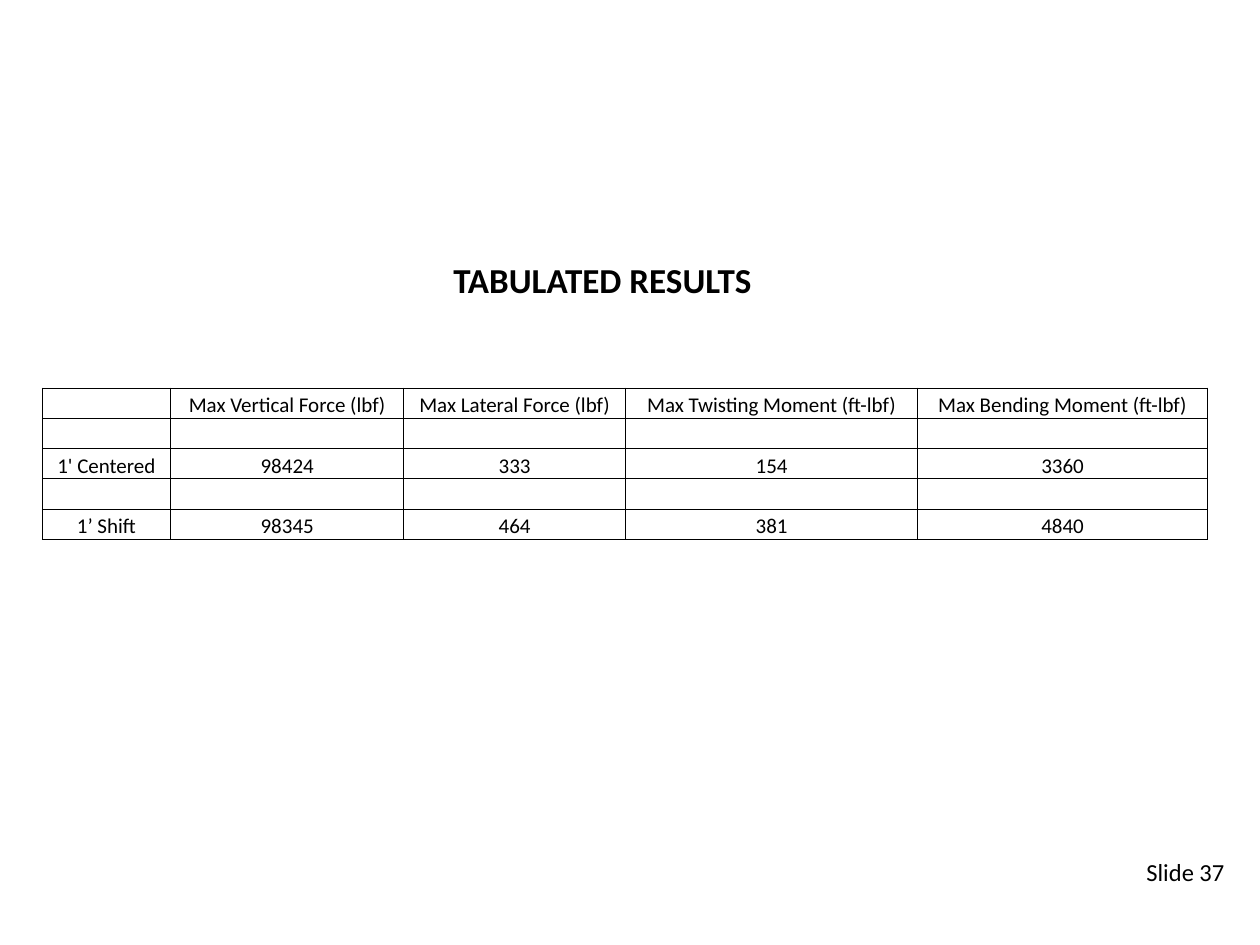
from lxml.etree import SubElement
from pptx import Presentation
from pptx.dml.color import RGBColor
from pptx.enum.text import MSO_ANCHOR, PP_ALIGN
from pptx.oxml.ns import qn
from pptx.util import Cm, Pt

BLACK = RGBColor(0x00, 0x00, 0x00)
FONT = "Calibri"
SIZE = 12

COLS = [2.59, 4.7, 4.47, 5.89, 5.84]
ROW = 0.61
DATA = [
    ["", "Max Vertical Force (lbf)", "Max Lateral Force (lbf)",
     "Max Twisting Moment (ft-lbf)", "Max Bending Moment (ft-lbf)"],
    [""] * 5,
    ["1' Centered", "98424", "333", "154", "3360"],
    [""] * 5,
    ["1’ Shift", "98345", "464", "381", "4840"],
]


def write(frame, text, size=SIZE, bold=False, align=PP_ALIGN.LEFT):
    par = frame.paragraphs[0]
    par.alignment = align
    if not text:
        # An empty cell needs its own text size to keep the row low
        SubElement(par._p, qn("a:endParaRPr"), sz=str(size * 100))
        return
    run = par.add_run()
    run.text = text
    run.font.name = FONT
    run.font.size = Pt(size)
    run.font.bold = bold
    run.font.color.rgb = BLACK


def add_label(slide, box, text, wrap=True, **style):
    label = slide.shapes.add_textbox(*[Cm(n) for n in box])
    label.text_frame.word_wrap = wrap
    write(label.text_frame, text, **style)


def add_borders(cell):
    props = cell._tc.get_or_add_tcPr()
    for side in ("a:lnL", "a:lnR", "a:lnT", "a:lnB"):
        line = SubElement(props, qn(side), w=str(Pt(0.5)))
        fill = SubElement(line, qn("a:solidFill"))
        SubElement(fill, qn("a:srgbClr"), val=str(BLACK))


def add_grid(slide, left, top):
    frame = slide.shapes.add_table(
        len(DATA), len(COLS), Cm(left), Cm(top),
        Cm(sum(COLS)), Cm(ROW * len(DATA)))
    table = frame.table
    table.first_row = False
    table.horz_banding = False
    for col, width in zip(table.columns, COLS):
        col.width = Cm(width)
    for row, texts in zip(table.rows, DATA):
        row.height = Cm(ROW)
        for cell, text in zip(row.cells, texts):
            add_borders(cell)
            cell.fill.background()
            cell.margin_left = cell.margin_right = cell.margin_top = Cm(0.02)
            cell.margin_bottom = 0
            cell.vertical_anchor = MSO_ANCHOR.BOTTOM
            write(cell.text_frame, text, align=PP_ALIGN.CENTER)


def main():
    deck = Presentation()
    deck.slide_width, deck.slide_height = Cm(25.4), Cm(19.05)
    slide = deck.slides.add_slide(deck.slide_layouts[6])

    # Results table
    add_grid(slide, 0.85, 7.82)

    # Title and slide number
    add_label(slide, (8.89, 5.08, 6.58, 1.11), "TABULATED RESULTS",
              wrap=False, size=20, bold=True)
    add_label(slide, (22.86, 17.15, 2.54, 0.86), "Slide 37", size=14)

    deck.save("out.pptx")


if __name__ == "__main__":
    main()
